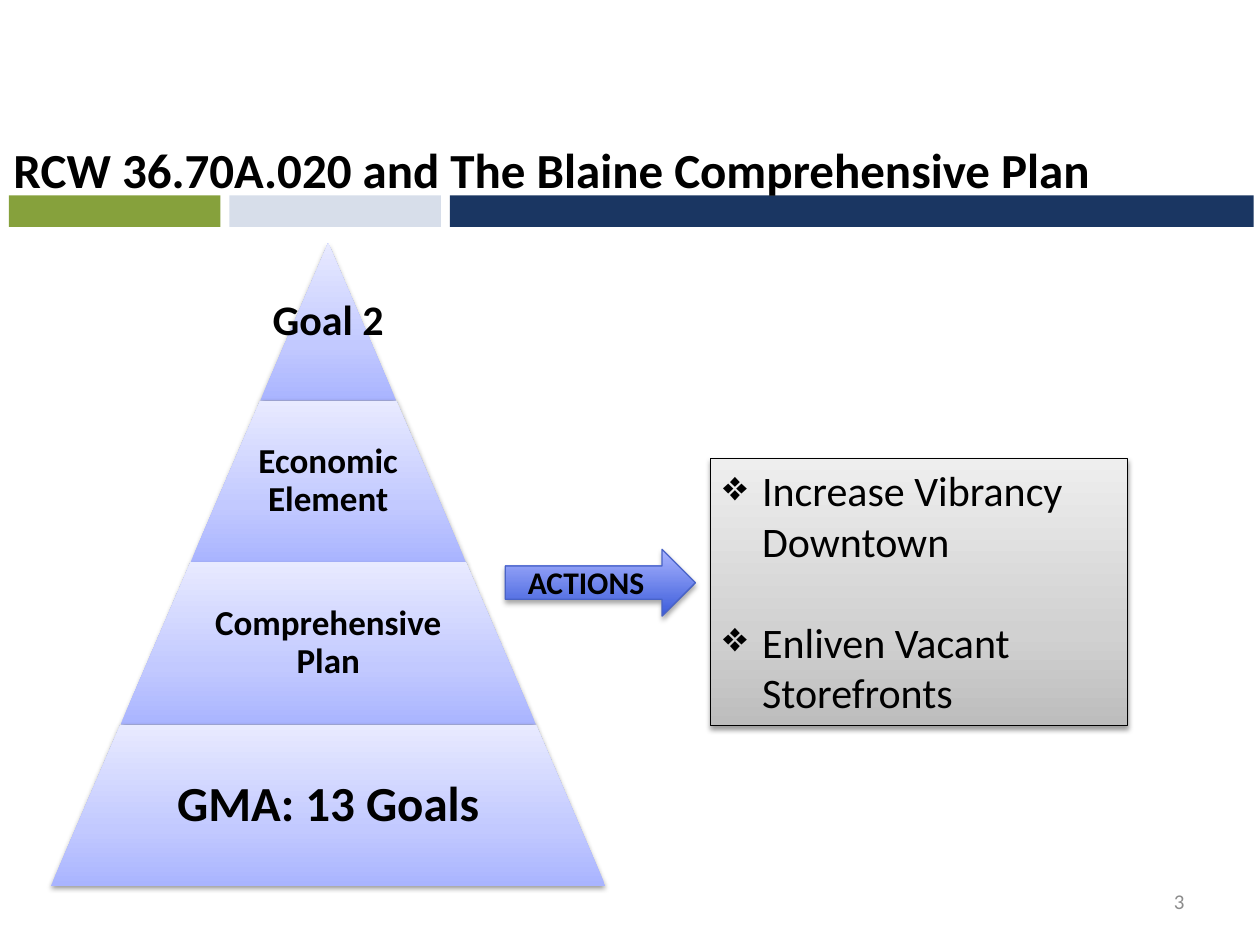
"""Build the slide with the planning pyramid and its downtown actions."""
from lxml import etree
from pptx import Presentation
from pptx import util as u
from pptx.dml.color import RGBColor
from pptx.enum import shapes, text
from pptx.oxml import ns

THEME = {
    "font": "Calibri",
    "ink": "000000", "muted": "8C8C8C", "arrow_line": "4963C7",
    "bars": ("86A13C", "D7DEEA", "1A3662"),
    "tier": ((0, "A9B4FF"), (35, "C2C9FF"), (100, "E8EAFF")),
    "panel": ((0, "BDBDBD"), (35, "D1D1D1"), (100, "EEEEEE")),
    "arrow": ((0, "3C5CDA"), (100, "A9B4FF")),
    "title": 28, "large": 24, "medium": 20, "label": 18, "number": 12,
}
COLUMNS, ROWS = 100, 75
KIND, ALIGN, ANCHOR = shapes.MSO_SHAPE, text.PP_ALIGN, text.MSO_ANCHOR

prs = Presentation()
prs.slide_width, prs.slide_height = u.Inches(10), u.Inches(7.5)
col, row = prs.slide_width / COLUMNS, prs.slide_height / ROWS
s = prs.slides.add_slide(prs.slide_layouts[6])


def add_shape(kind, x, y, w, h, fill, line=None, shadow=None):
    """Add a preset shape on the grid with a solid or gradient fill."""
    sp = s.shapes.add_shape(kind, int(x * col), int(y * row), int(w * col), int(h * row))
    sp.shadow.inherit = False
    if isinstance(fill, str):
        sp.fill.solid()
        sp.fill.fore_color.rgb = RGBColor.from_string(fill)
    else:
        sp.fill.gradient()
        sp.fill.gradient_angle = 90
        stops = sp._element.spPr.find(".//" + ns.qn("a:gsLst"))
        for stop in list(stops):
            stops.remove(stop)
        for share, color in fill:
            gs = etree.SubElement(stops, ns.qn("a:gs"), pos=str(share * 1000))
            etree.SubElement(gs, ns.qn("a:srgbClr"), val=color)
    if line:
        sp.line.color.rgb = RGBColor.from_string(line)
        sp.line.width = u.Pt(0.75)
    else:
        sp.line.fill.background()
    if shadow:
        alpha, distance = shadow
        effects = sp._element.spPr.find(ns.qn("a:effectLst"))
        outer = etree.SubElement(effects, ns.qn("a:outerShdw"), blurRad=str(u.Pt(3.1)),
                                 dist=str(u.Pt(distance)), dir="5400000", rotWithShape="0")
        color = etree.SubElement(outer, ns.qn("a:srgbClr"), val=THEME["ink"])
        etree.SubElement(color, ns.qn("a:alpha"), val=str(alpha * 1000))
    return sp


def add_text(box, lines, size, color="ink", bold=False, frame=None, para=None):
    """Write lines into a shape, or into a new text box given as grid numbers."""
    if isinstance(box, tuple):
        x, y, w, h = box
        box = s.shapes.add_textbox(int(x * col), int(y * row), int(w * col), int(h * row))
    tf = box.text_frame
    for name, value in {"word_wrap": True, "vertical_anchor": ANCHOR.TOP, **(frame or {})}.items():
        setattr(tf, name, value)
    for i, line in enumerate(lines):
        p = tf.paragraphs[0] if i == 0 else tf.add_paragraph()
        for name, value in {"alignment": ALIGN.LEFT, **(para or {})}.items():
            setattr(p, name, value)
        r = p.add_run()
        r.text = line
        for name, value in {"name": THEME["font"], "size": u.Pt(THEME[size]), "bold": bold}.items():
            setattr(r.font, name, value)
        r.font.color.rgb = RGBColor.from_string(THEME[color])
    return tf


x = 0.7
for width, color in zip((16.8, 16.8, 63.8), THEME["bars"]):
    add_shape(KIND.RECTANGLE, x, 15.5, width, 2.5, color)
    x += width + 0.7

add_text((-0.8, 10.6, 92.5, 5.7), ["RCW 36.70A.020 and The Blaine Comprehensive Plan"],
         "title", bold=True, frame={"margin_left": int(1.87 * col)})
add_text((71.7, 69.5, 23.3, 4), ["3"], "number", "muted",
         frame={"vertical_anchor": ANCHOR.MIDDLE}, para={"alignment": ALIGN.RIGHT})

center, half_base = 26.05, 22
edges = (19.3, 31.8, 44.6, 57.5, 70.3)
slope = half_base / (edges[-1] - edges[0])
margins = ("margin_left", "margin_top", "margin_right", "margin_bottom")
tier_frame = {"vertical_anchor": ANCHOR.MIDDLE, **dict.fromkeys(margins, int(0.3 * col))}
tiers = (("Goal 2", "large", 1), ("Economic Element", "medium", 0.65),
         ("Comprehensive Plan", "medium", 0.65), ("GMA: 13 Goals", "title", 0.65))
for (label, size, share), top, bottom in zip(tiers, edges, edges[1:]):
    height = bottom - top
    half = slope * (bottom - edges[0])
    sp = add_shape(KIND.TRAPEZOID, center - half, top, 2 * half, height,
                   THEME["tier"], shadow=(38, 1.6))
    sp.adjustments[0] = slope * height / min(2 * half, height)
    add_text((center - half * share, top, 2 * half * share, height), [label], size, bold=True,
             frame=tier_frame, para={"alignment": ALIGN.CENTER, "line_spacing": 0.9})

panel = add_shape(KIND.RECTANGLE, 56.4, 36.4, 33.1, 21.2, THEME["panel"], THEME["ink"], (38, 1.6))
tf = add_text(panel, ["Increase Vibrancy Downtown", "Enliven Vacant Storefronts"], "large")
tf.paragraphs[1].space_before = u.Pt(29)
indent = int(3.1 * col)
for p in tf.paragraphs:
    pPr = p._p.get_or_add_pPr()
    pPr.set("marL", str(indent))
    pPr.set("indent", str(-indent))
    etree.SubElement(pPr, ns.qn("a:buChar"), char="❖")

add_shape(KIND.RIGHT_ARROW, 40.1, 43.6, 15.1, 5.3, THEME["arrow"], THEME["arrow_line"], (35, 1.8))
add_text((40.9, 44.2, 11.5, 4), ["ACTIONS"], "label", bold=True)

prs.save("out.pptx")
